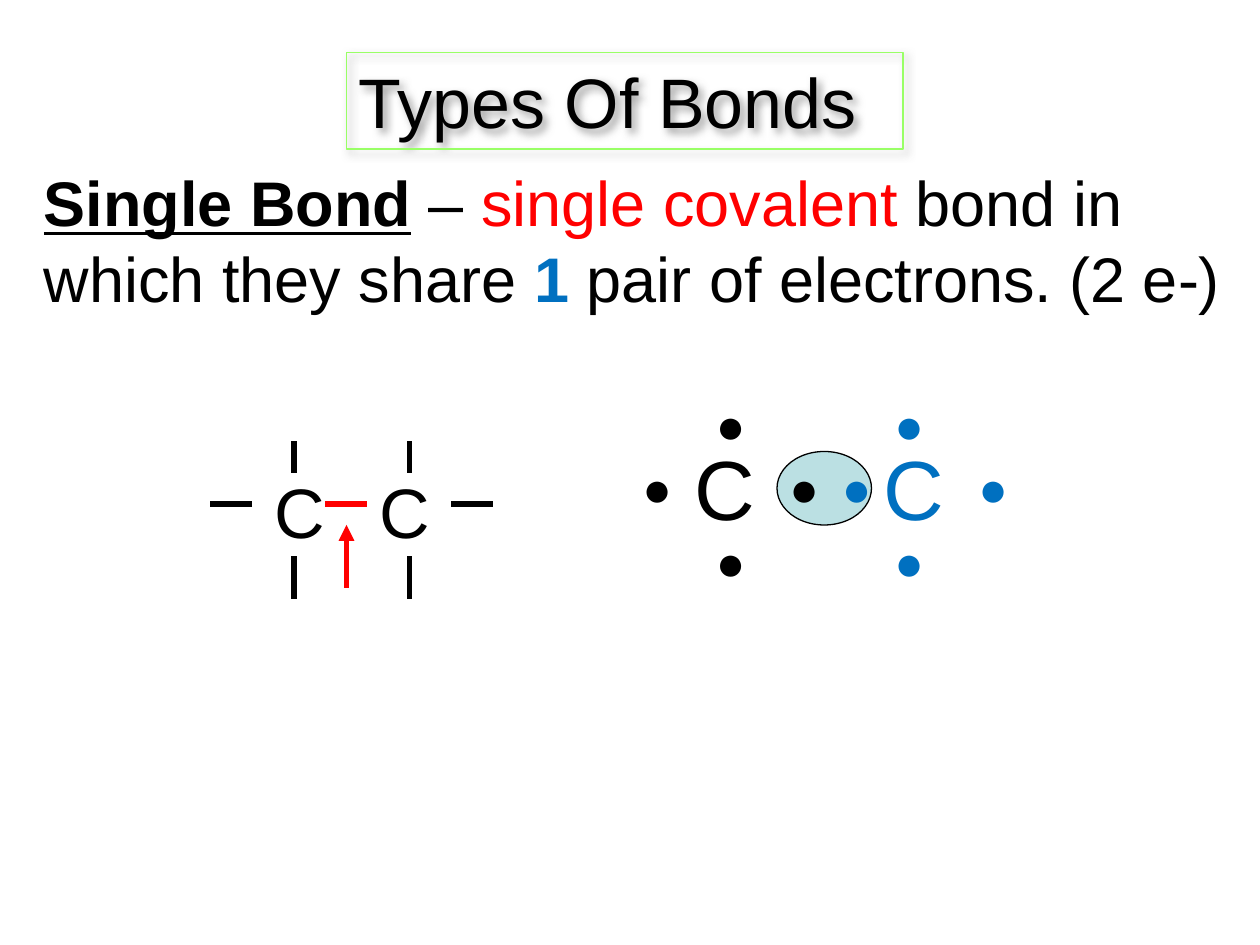
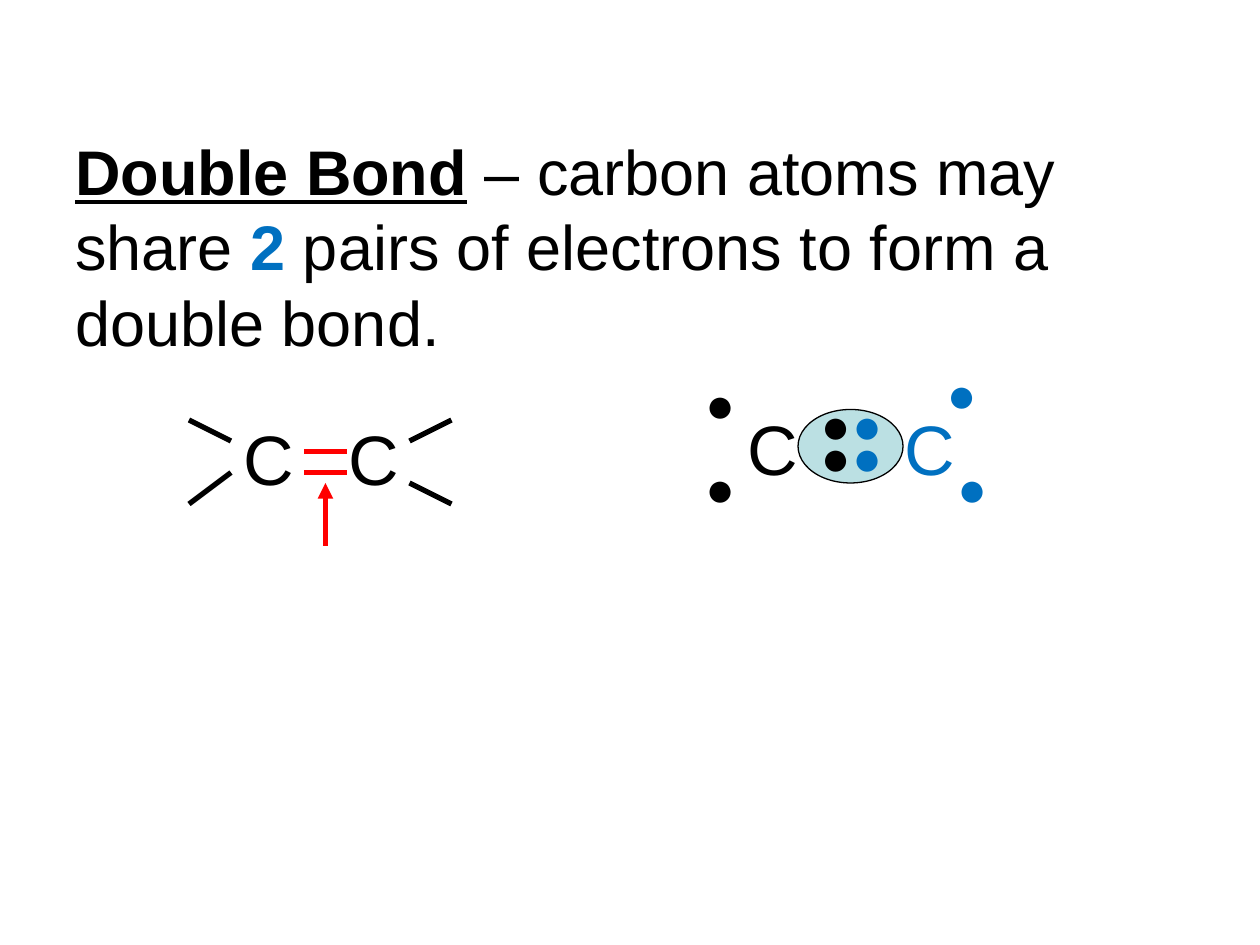
"""Build two slides on single and double covalent bonds between carbon atoms."""
from dataclasses import dataclass
from typing import Any

from lxml import etree
from pptx import Presentation
from pptx.dml.color import RGBColor
from pptx.enum import shapes, text
from pptx.oxml import ns
from pptx.util import Pt

BLACK = RGBColor(0x00, 0x00, 0x00)
RED = RGBColor(0xFF, 0x00, 0x00)
BLUE = RGBColor(0x00, 0x70, 0xC0)
PALE_TEAL = RGBColor(0xBB, 0xE0, 0xE3)
LIME = RGBColor(0x99, 0xFF, 0x66)
SHADOW_GREY = "808080"

FONT = "Arial"
LINE_HEIGHT = 1.2
INSETS = 7.2
TITLE_SIZE, DEFINITION_SIZE, DOT_SIZE = 40, 36, 28
TERM = {"bold": True, "underline": True}
COUNT = {"bold": True}
FRAME_FORMAT = {
    "word_wrap": True,
    "auto_size": text.MSO_AUTO_SIZE.SHAPE_TO_FIT_TEXT,
    "vertical_anchor": text.MSO_ANCHOR.TOP,
}


@dataclass(frozen=True)
class Phrase:
    """A stretch of text with one colour and style."""
    wording: str
    colour: RGBColor = BLACK
    style: dict[str, Any] | None = None


@dataclass(frozen=True)
class Box:
    """A rectangle in points."""
    left: float
    top: float
    width: float
    height: float


@dataclass(frozen=True)
class Atom:
    """A carbon symbol placed by its text box."""
    left: float
    top: float
    width: float = 36
    size: int = 40
    colour: RGBColor = BLACK


@dataclass(frozen=True)
class Electron:
    """A valence electron placed by its text box."""
    left: float
    top: float
    width: float = 24
    colour: RGBColor = BLACK


@dataclass(frozen=True)
class Bond:
    """A stroke between two points, with an arrowhead if it is a pointer."""
    x1: float
    y1: float
    x2: float
    y2: float
    colour: RGBColor = BLACK
    pointer: bool = False


@dataclass(frozen=True)
class BondSlide:
    """The definition and both diagrams of one bond type."""
    definition_box: Box
    definition: tuple[Phrase, ...]
    shared_pair: Box
    atoms: tuple[Atom, ...]
    bonds: tuple[Bond, ...]
    electrons: tuple[Electron, ...]
    title: str = ""


SINGLE = BondSlide(
    title="Types Of Bonds",
    definition_box=Box(18, 90, 702, 93.6),
    definition=(
        Phrase("Single Bond", style=TERM),
        Phrase(" – "),
        Phrase("single covalent ", RED),
        Phrase("bond in which they share "),
        Phrase("1 ", BLUE, COUNT),
        Phrase("pair of electrons. (2 e-)"),
    ),
    shared_pair=Box(444, 258, 54, 42),
    atoms=(
        Atom(150, 264, 54),
        Atom(210, 264, 60),
        Atom(390, 246, size=48),
        Atom(498, 246, 42, 48, BLUE),
    ),
    bonds=(
        Bond(186, 288, 210, 288, RED),
        Bond(144, 288, 120, 288),
        Bond(258, 288, 282, 288),
        *(Bond(x, start, x, end) for x in (168, 234)
          for start, end in ((270, 252), (318, 342))),
        Bond(198, 336, 198, 300, RED, pointer=True),
    ),
    electrons=(
        Electron(360, 258, 30),
        Electron(444, 258, 36),
        Electron(474, 258, 36, BLUE),
        Electron(552, 258, colour=BLUE),
        *(Electron(left, top, colour=colour)
          for left, colour in ((402, BLACK), (504, BLUE)) for top in (222, 300)),
    ),
)

DOUBLE = BondSlide(
    definition_box=Box(36, 72, 654, 136.8),
    definition=(
        Phrase("Double Bond", style=TERM),
        Phrase(" – carbon atoms may share "),
        Phrase("2 ", BLUE, COUNT),
        Phrase("pairs of electrons to form a double bond."),
    ),
    shared_pair=Box(456, 234, 60, 42),
    atoms=(
        Atom(132, 234),
        Atom(192, 234, 48),
        Atom(420, 228),
        Atom(510, 228, colour=BLUE),
    ),
    bonds=(
        Bond(108, 288, 132, 270),
        Bond(108, 240, 132, 252),
        Bond(234, 276, 258, 288),
        Bond(234, 252, 258, 240),
        *(Bond(174, y, 198, y, RED) for y in (258, 270)),
        Bond(186, 312, 186, 276, RED, pointer=True),
    ),
    electrons=(
        *(Electron(left, top, width, colour)
          for left, width, colour in ((480, 24, BLUE), (462, 30, BLACK))
          for top in (240, 222)),
        *(Electron(396, top) for top in (258, 210)),
        Electron(540, 258, 42, BLUE),
        Electron(534, 204, 42, BLUE),
    ),
)


def lengths(box: Box) -> tuple[int, ...]:
    """Convert a box to slide lengths."""
    return tuple(Pt(v) for v in (box.left, box.top, box.width, box.height))


def line_box(left: float, top: float, width: float, size: int) -> Box:
    """Give the box that holds one line of text."""
    return Box(left, top, width, size * LINE_HEIGHT + INSETS)


def write(shape: Any, phrases: tuple[Phrase, ...], size: int) -> None:
    """Fill a shape with one left-aligned paragraph."""
    frame = shape.text_frame
    for name, value in FRAME_FORMAT.items():
        setattr(frame, name, value)
    paragraph = frame.paragraphs[0]
    paragraph.alignment = text.PP_ALIGN.LEFT
    for phrase in phrases:
        run = paragraph.add_run()
        run.text = phrase.wording
        font_format = {"name": FONT, "size": Pt(size), **(phrase.style or {})}
        for name, value in font_format.items():
            setattr(run.font, name, value)
        run.font.color.rgb = phrase.colour


def add_text(slide: Any, box: Box, phrases: tuple[Phrase, ...], size: int) -> None:
    """Place a text box."""
    write(slide.shapes.add_textbox(*lengths(box)), phrases, size)


def add_outlined(slide: Any, kind: Any, box: Box, line: RGBColor) -> Any:
    """Place a preset shape with a thin outline and no shadow."""
    shape = slide.shapes.add_shape(kind, *lengths(box))
    shape.shadow.inherit = False
    shape.line.color.rgb = line
    shape.line.width = Pt(0.75)
    return shape


def add_title(slide: Any, wording: str) -> None:
    """Place the framed title with its soft shadow."""
    frame = add_outlined(slide, shapes.MSO_SHAPE.RECTANGLE,
                         line_box(198, 30, 318, TITLE_SIZE), LIME)
    frame.fill.background()
    write(frame, (Phrase(wording),), TITLE_SIZE)
    effects = frame._element.spPr.find(ns.qn("a:effectLst"))
    shadow = etree.SubElement(
        effects, ns.qn("a:outerShdw"), blurRad=str(Pt(5)), dist=str(Pt(3)),
        dir=str(45 * 60000), algn="ctr", rotWithShape="0")
    colour = etree.SubElement(shadow, ns.qn("a:srgbClr"), val=SHADOW_GREY)
    etree.SubElement(colour, ns.qn("a:alpha"), val="75000")


def add_bond(slide: Any, bond: Bond) -> None:
    """Draw a bond stroke or a pointer arrow."""
    ends = (Pt(v) for v in (bond.x1, bond.y1, bond.x2, bond.y2))
    stroke = slide.shapes.add_connector(shapes.MSO_CONNECTOR.STRAIGHT, *ends)
    stroke.line.color.rgb = bond.colour
    stroke.line.width = Pt(3)
    if bond.pointer:
        etree.SubElement(stroke.line._get_or_add_ln(), ns.qn("a:tailEnd"), type="triangle")
    etree.SubElement(stroke._element.spPr, ns.qn("a:effectLst"))


def add_bond_slide(deck: Any, content: BondSlide) -> None:
    """Add one slide with its definition and diagrams."""
    slide = deck.slides.add_slide(deck.slide_layouts[6])
    shared_pair = add_outlined(slide, shapes.MSO_SHAPE.OVAL, content.shared_pair, BLACK)
    shared_pair.fill.solid()
    shared_pair.fill.fore_color.rgb = PALE_TEAL
    add_text(slide, content.definition_box, content.definition, DEFINITION_SIZE)
    for atom in content.atoms:
        add_text(slide, line_box(atom.left, atom.top, atom.width, atom.size),
                 (Phrase("C", atom.colour),), atom.size)
    for bond in content.bonds:
        add_bond(slide, bond)
    for electron in content.electrons:
        add_text(slide, line_box(electron.left, electron.top, electron.width, DOT_SIZE),
                 (Phrase("●", electron.colour),), DOT_SIZE)
    if content.title:
        add_title(slide, content.title)


def main() -> None:
    """Build and save the slides."""
    deck = Presentation()
    deck.slide_width, deck.slide_height = Pt(720), Pt(540)
    for content in (SINGLE, DOUBLE):
        add_bond_slide(deck, content)
    deck.save("out.pptx")


if __name__ == "__main__":
    main()
